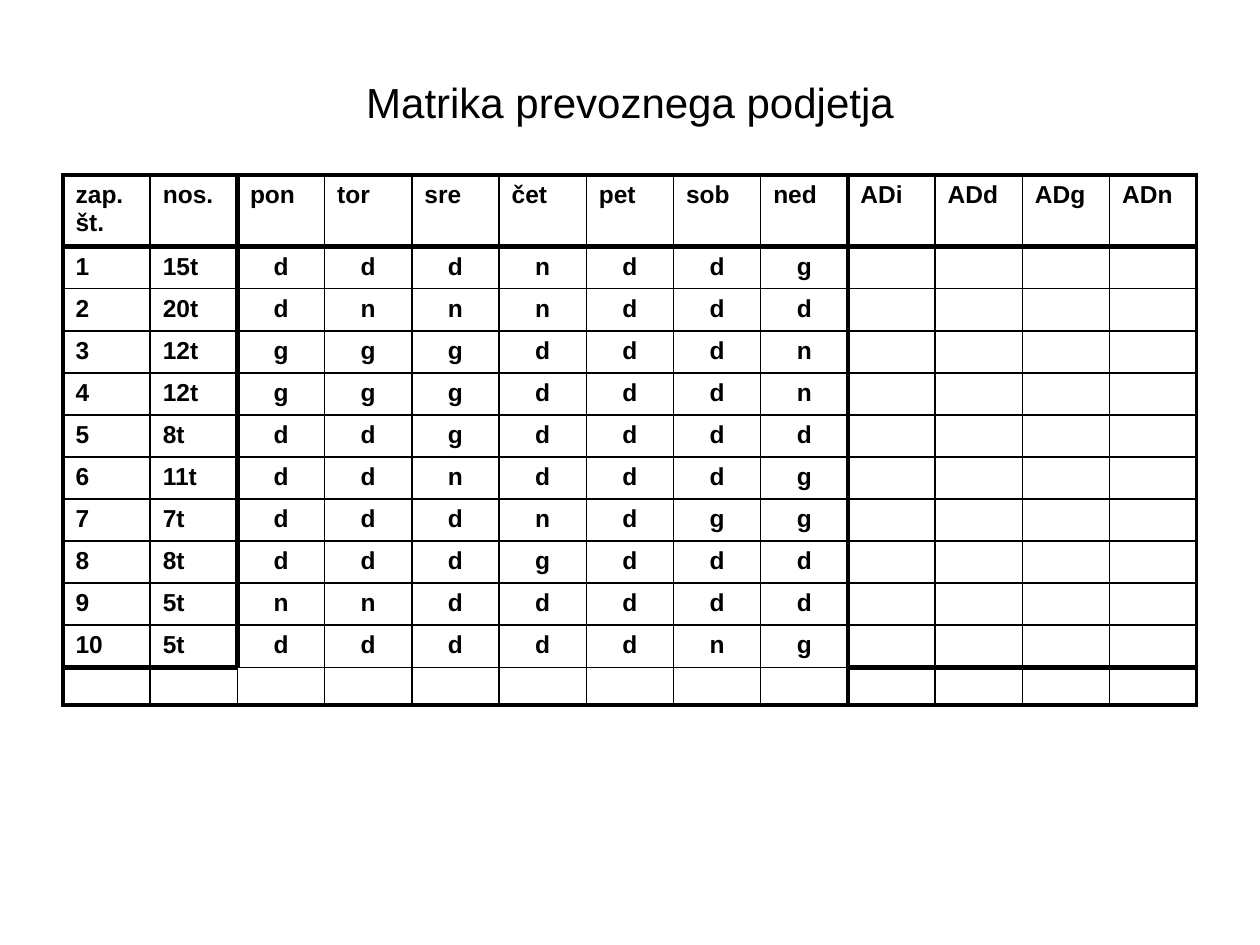
import lxml.etree
import pptx
import pptx.dml.color
import pptx.enum.text
import pptx.oxml.ns
import pptx.util

COLORS = {"text": "000000", "border": "000000"}
FONT = "Arial"
THIN, OUTER, THICK = 1, 2.25, 3

HEADERS = ["zap. št.", "nos.", "pon", "tor", "sre", "čet", "pet", "sob", "ned",
           "ADi", "ADd", "ADg", "ADn"]
VEHICLES = [
    ("15t", "dddnddg"),
    ("20t", "dnnnddd"),
    ("12t", "gggdddn"),
    ("12t", "gggdddn"),
    ("8t", "ddgdddd"),
    ("11t", "ddndddg"),
    ("7t", "dddndgg"),
    ("8t", "dddgddd"),
    ("5t", "nnddddd"),
    ("5t", "dddddng"),
]
FIRST_DAY, FIRST_TOTAL = 2, 9


def add_run(paragraph, text, size, bold=False):
    run = paragraph.add_run()
    run.text = text
    run.font.name = FONT
    run.font.size = pptx.util.Pt(size)
    run.font.bold = bold
    run.font.color.rgb = pptx.dml.color.RGBColor.from_string(COLORS["text"])


def add_border(cell, side, width):
    properties = cell._tc.get_or_add_tcPr()
    line = lxml.etree.SubElement(properties, pptx.oxml.ns.qn(f"a:ln{side}"),
                                 w=str(pptx.util.Pt(width)))
    fill = lxml.etree.SubElement(line, pptx.oxml.ns.qn("a:solidFill"))
    lxml.etree.SubElement(fill, pptx.oxml.ns.qn("a:srgbClr"), val=COLORS["border"])


presentation = pptx.Presentation()
presentation.slide_width = pptx.util.Inches(10)
presentation.slide_height = pptx.util.Inches(7.5)
slide = presentation.slides.add_slide(presentation.slide_layouts[6])

title = slide.shapes.add_textbox(pptx.util.Inches(0.5), pptx.util.Inches(0.3),
                                 pptx.util.Inches(9), pptx.util.Inches(1.01))
title.text_frame.word_wrap = True
title.text_frame.vertical_anchor = pptx.enum.text.MSO_ANCHOR.MIDDLE
title_paragraph = title.text_frame.paragraphs[0]
title_paragraph.alignment = pptx.enum.text.PP_ALIGN.CENTER
add_run(title_paragraph, "Matrika prevoznega podjetja", 24)

rows = [HEADERS]
for number, (capacity, days) in enumerate(VEHICLES, 1):
    rows.append([str(number), capacity, *days] + [""] * 4)
rows.append([""] * len(HEADERS))
row_heights = [0.53] + [0.32] * len(VEHICLES) + [0.29]
last_row, last_column = len(rows) - 1, len(HEADERS) - 1

table = slide.shapes.add_table(
    len(rows), len(HEADERS), pptx.util.Inches(0.5), pptx.util.Inches(1.39),
    pptx.util.Inches(9), pptx.util.Inches(sum(row_heights))).table
table.first_row = False
table.horz_banding = False
for column in table.columns:
    column.width = pptx.util.Inches(9 / len(HEADERS))

for row, values in enumerate(rows):
    table.rows[row].height = pptx.util.Inches(row_heights[row])
    for column, value in enumerate(values):
        cell = table.cell(row, column)
        paragraph = cell.text_frame.paragraphs[0]
        if value:
            add_run(paragraph, value, 14, True)
        else:
            lxml.etree.SubElement(paragraph._p, pptx.oxml.ns.qn("a:endParaRPr"), sz="1200")
        if 0 < row < last_row and FIRST_DAY <= column < FIRST_TOTAL:
            paragraph.alignment = pptx.enum.text.PP_ALIGN.CENTER

        vertical = {0: OUTER, len(HEADERS): OUTER, FIRST_TOTAL: THICK,
                    FIRST_DAY: THICK if row < last_row else THIN}
        outside_days = not FIRST_DAY <= column < FIRST_TOTAL
        horizontal = {0: OUTER, len(rows): OUTER, 1: THICK,
                      last_row: THICK if outside_days else THIN}
        add_border(cell, "L", vertical.get(column, THIN))
        add_border(cell, "R", vertical.get(column + 1, THIN))
        add_border(cell, "T", horizontal.get(row, THIN))
        add_border(cell, "B", horizontal.get(row + 1, THIN))
        cell.fill.background()

presentation.save("out.pptx")
